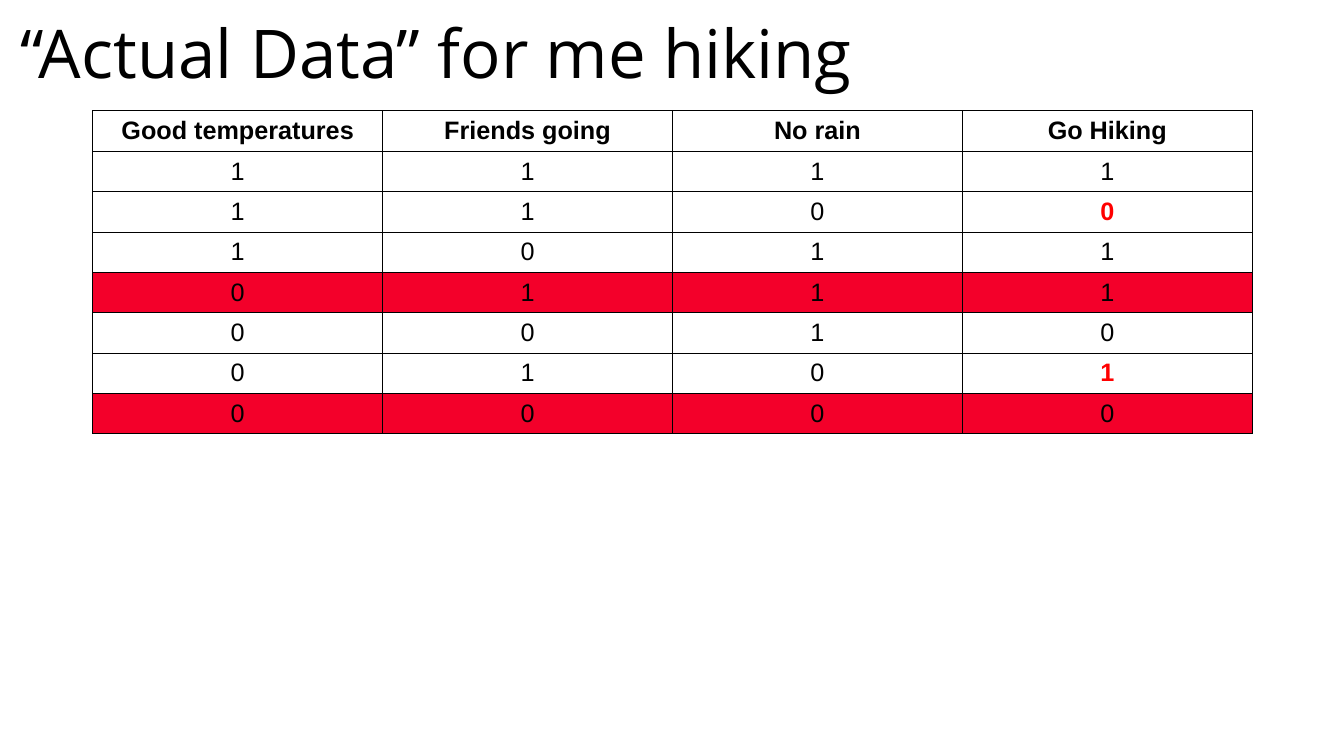
from dataclasses import dataclass

from lxml import etree
from pptx import Presentation
from pptx import util as u
from pptx.dml.color import RGBColor
from pptx.enum import text
from pptx.oxml import ns

# Content
TITLE = "“Actual Data” for me hiking"
HEADINGS = ("Good temperatures", "Friends going", "No rain", "Go Hiking")
OBSERVATIONS = (
    (1, 1, 1, 1),
    (1, 1, 0, 0),
    (1, 0, 1, 1),
    (0, 1, 1, 1),
    (0, 0, 1, 0),
    (0, 1, 0, 1),
    (0, 0, 0, 0),
)
SHADED_ROWS = {4, 7}
CHANGED_CELLS = {(2, 3), (6, 3)}


@dataclass(frozen=True)
class Theme:
    title_font: str = "Open Sans"
    table_font: str = "Arial"
    title_size: u.Pt = u.Pt(48)
    table_size: u.Pt = u.Pt(18)
    border_width: u.Pt = u.Pt(0.75)
    ink: str = "000000"
    changed: str = "FF0000"
    shade: str = "F3002A"


THEME = Theme()

# Layout
SLIDE_W, SLIDE_H = u.Inches(13.33), u.Inches(7.5)
TITLE_H = int(SLIDE_H * 0.15)
TITLE_INSET = u.Inches(0.2)
TABLE_LEFT, TABLE_TOP = u.Inches(0.92), u.Inches(1.1)
COLUMN_W, ROW_H = u.Inches(11.5 / len(HEADINGS)), u.Inches(0.4)


def set_font(paragraph, name, size, color, bold=False):
    font = paragraph.font
    font.name, font.size, font.bold = name, size, bold
    font.color.rgb = RGBColor.from_string(color)


def add_borders(cell):
    properties = cell._tc.get_or_add_tcPr()
    for side in ("a:lnL", "a:lnR", "a:lnT", "a:lnB"):
        line = etree.SubElement(properties, ns.qn(side), w=str(THEME.border_width))
        fill = etree.SubElement(line, ns.qn("a:solidFill"))
        etree.SubElement(fill, ns.qn("a:srgbClr"), val=THEME.ink)


def add_title(slide):
    title = slide.shapes.add_textbox(0, 0, SLIDE_W, TITLE_H).text_frame
    title.word_wrap = True
    title.vertical_anchor = text.MSO_ANCHOR.MIDDLE
    title.margin_left = title.margin_right = TITLE_INSET
    title.margin_top = title.margin_bottom = TITLE_INSET
    heading = title.paragraphs[0]
    heading.text = TITLE
    heading.line_spacing = 0.9
    set_font(heading, THEME.title_font, THEME.title_size, THEME.ink)


def fill_cell(cell, value, row, column):
    add_borders(cell)
    if row in SHADED_ROWS:
        cell.fill.solid()
        cell.fill.fore_color.rgb = RGBColor.from_string(THEME.shade)
    else:
        cell.fill.background()
    cell.vertical_anchor = text.MSO_ANCHOR.MIDDLE
    entry = cell.text_frame.paragraphs[0]
    entry.text = str(value)
    entry.alignment = text.PP_ALIGN.CENTER
    changed = (row, column) in CHANGED_CELLS
    set_font(entry, THEME.table_font, THEME.table_size,
             THEME.changed if changed else THEME.ink, row == 0 or changed)


def add_observations(slide):
    rows = (HEADINGS, *OBSERVATIONS)
    observations = slide.shapes.add_table(
        len(rows), len(HEADINGS), TABLE_LEFT, TABLE_TOP,
        COLUMN_W * len(HEADINGS), ROW_H * len(rows)).table
    observations.horz_banding = False
    for row, values in enumerate(rows):
        for column, value in enumerate(values):
            fill_cell(observations.cell(row, column), value, row, column)


def main():
    deck = Presentation()
    deck.slide_width, deck.slide_height = SLIDE_W, SLIDE_H
    slide = deck.slides.add_slide(deck.slide_layouts[6])
    add_title(slide)
    add_observations(slide)
    deck.save("out.pptx")


if __name__ == "__main__":
    main()
